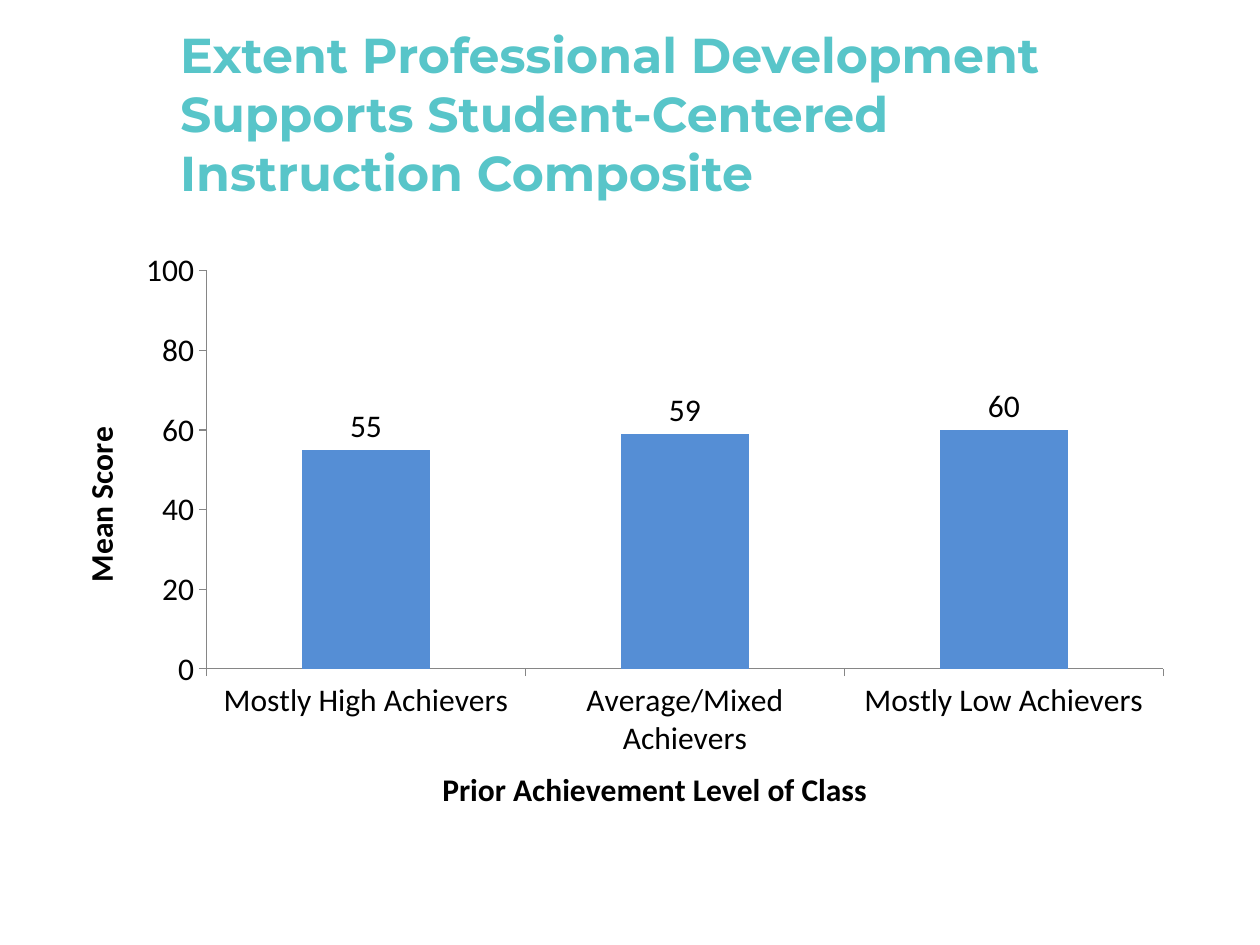
from lxml import etree
from pptx import Presentation
from pptx.chart.data import CategoryChartData
from pptx.dml.color import RGBColor
from pptx.enum.chart import XL_CHART_TYPE, XL_LABEL_POSITION, XL_TICK_MARK
from pptx.enum.text import MSO_ANCHOR, PP_ALIGN
from pptx.oxml.ns import qn
from pptx.util import Inches, Pt

TEAL = RGBColor(0x58, 0xC5, 0xC9)
BLUE = RGBColor(0x55, 0x8E, 0xD5)
GRAY = RGBColor(0x86, 0x86, 0x86)
BLACK = RGBColor(0, 0, 0)


def format_font(font, name, size, color, bold):
    font.name = name
    font.size = Pt(size)
    font.color.rgb = color
    font.bold = bold


def place_title(page, left, top, width, height):
    title = page.shapes.title
    title.left, title.top, title.width, title.height = left, top, width, height
    frame = title.text_frame
    frame.text = "Extent Professional Development Supports Student-Centered Instruction Composite"
    frame.word_wrap = True
    frame.vertical_anchor = MSO_ANCHOR.MIDDLE
    frame.margin_right = Inches(0.2)
    para = frame.paragraphs[0]
    para.alignment = PP_ALIGN.LEFT
    format_font(para.runs[0].font, "Montserrat", 28, TEAL, True)


def format_axis(axis, caption):
    axis.has_major_gridlines = False
    axis.major_tick_mark = XL_TICK_MARK.OUTSIDE
    axis.minor_tick_mark = XL_TICK_MARK.NONE
    axis.format.line.color.rgb = GRAY
    axis.format.line.width = Pt(0.75)
    format_font(axis.tick_labels.font, "Calibri", 18, BLACK, False)
    frame = axis.axis_title.text_frame
    frame.text = caption
    format_font(frame.paragraphs[0].runs[0].font, "Calibri", 18, BLACK, True)


def set_plot_layout(chart, x, y, w, h):
    plot_area = chart.plots[0]._element.getparent()
    for old in plot_area.findall(qn("c:layout")):
        plot_area.remove(old)
    layout = etree.Element(qn("c:layout"))
    plot_area.insert(0, layout)
    manual = etree.SubElement(layout, qn("c:manualLayout"))
    settings = {"layoutTarget": "inner", "xMode": "edge", "yMode": "edge",
                "x": x, "y": y, "w": w, "h": h}
    for tag, value in settings.items():
        etree.SubElement(manual, qn(f"c:{tag}")).set("val", str(value))


def place_score_chart(page, left, top, width, height):
    scores = CategoryChartData()
    scores.categories = ["Mostly High Achievers", "Average/Mixed Achievers",
                         "Mostly Low Achievers"]
    scores.add_series("Series 1", (55, 59, 60))
    chart = page.shapes.add_chart(
        XL_CHART_TYPE.COLUMN_CLUSTERED, left, top, width, height, scores).chart
    chart.has_title = False
    chart.has_legend = False
    format_font(chart.font, "Calibri", 18, BLACK, False)

    format_axis(chart.category_axis, "Prior Achievement Level of Class")
    format_axis(chart.value_axis, "Mean Score")
    chart.value_axis.minimum_scale = 0
    chart.value_axis.maximum_scale = 100
    chart.value_axis.major_unit = 20

    plot = chart.plots[0]
    plot.gap_width = 150
    plot.vary_by_categories = False
    fill = plot.series[0].format.fill
    fill.solid()
    fill.fore_color.rgb = BLUE
    plot.has_data_labels = True
    labels = plot.data_labels
    labels.show_value = True
    labels.position = XL_LABEL_POSITION.OUTSIDE_END
    format_font(labels.font, "Calibri", 18, BLACK, False)
    set_plot_layout(chart, 0.12, 0.05, 0.86, 0.69)


def main():
    deck = Presentation()
    deck.slide_width = Inches(10)
    deck.slide_height = Inches(7.5)
    page = deck.slides.add_slide(deck.slide_layouts[5])
    place_title(page, Inches(1.33), Inches(0.42), Inches(8.17), Inches(0.95))
    place_score_chart(page, Inches(0.58), Inches(1.92), Inches(8.83), Inches(4.58))
    deck.save("out.pptx")


if __name__ == "__main__":
    main()
